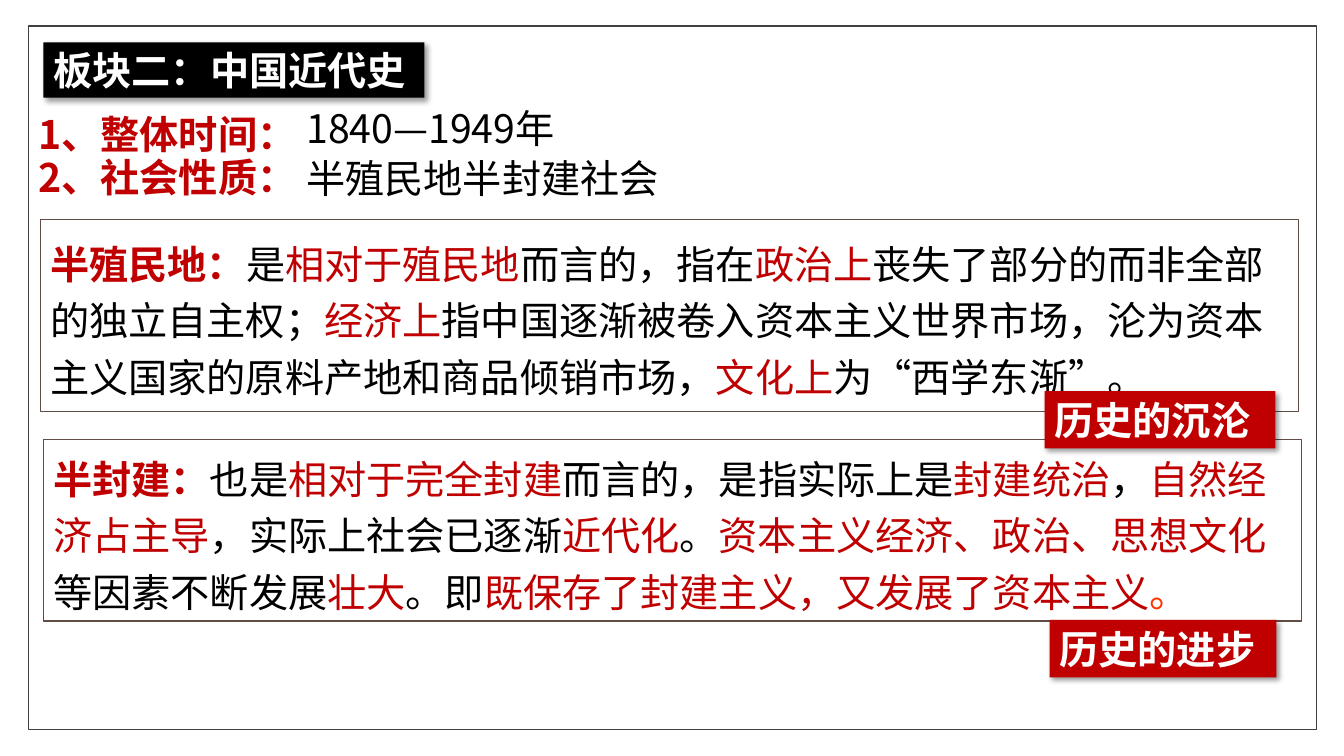
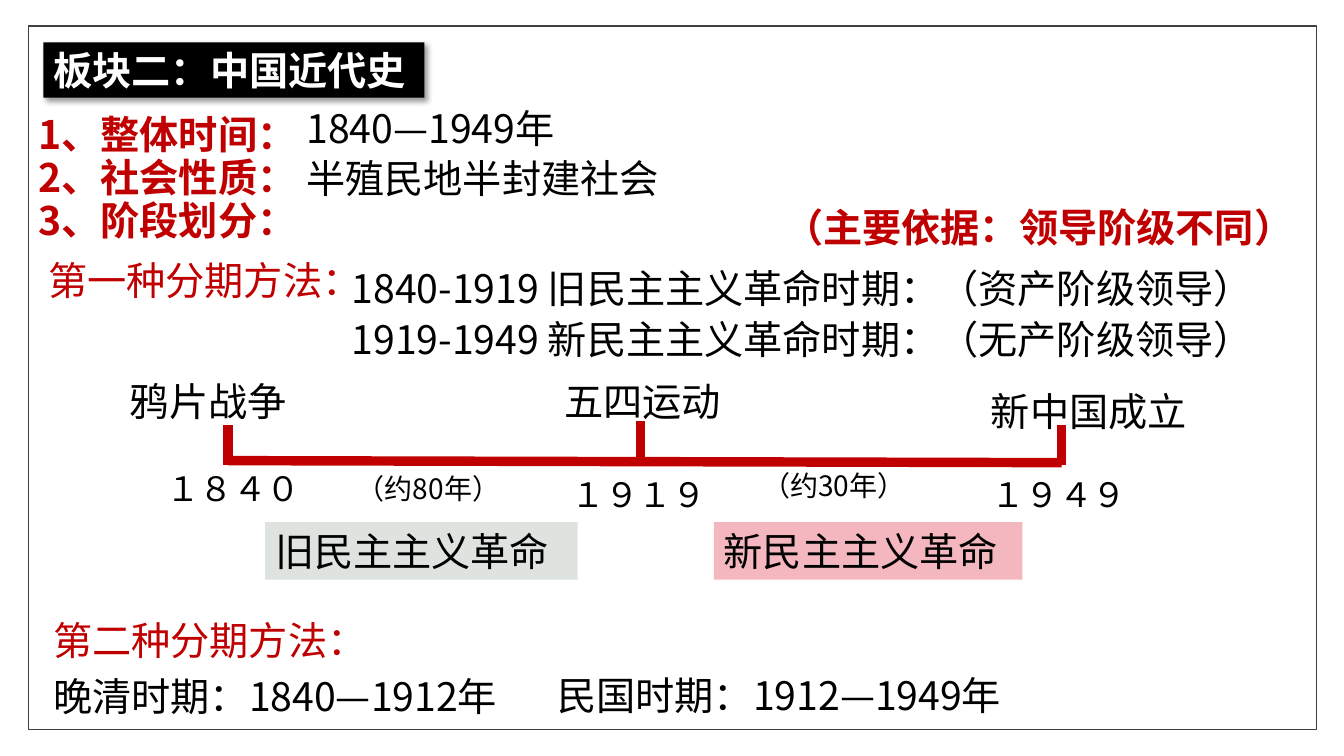
from lxml.etree import SubElement
from pptx import Presentation
from pptx.dml.color import RGBColor
from pptx.enum.shapes import MSO_CONNECTOR, MSO_SHAPE
from pptx.enum.text import MSO_ANCHOR, MSO_AUTO_SIZE, PP_ALIGN
from pptx.oxml import parse_xml
from pptx.oxml.ns import nsdecls, qn
from pptx.util import Emu, Pt

PX = 9144  # 100 px to the inch
FONT = "Noto Sans CJK SC"
INK = RGBColor(0x00, 0x00, 0x00)
WHITE = RGBColor(0xFF, 0xFF, 0xFF)
RED = RGBColor(0xC0, 0x00, 0x00)
ORANGE = RGBColor(0xFF, 0x33, 0x00)
GREY = RGBColor(0x40, 0x40, 0x40)
BROWN = RGBColor(0x60, 0x4C, 0x44)
MIST = RGBColor(0xDF, 0xE3, 0xE0)
PINK = RGBColor(0xF5, 0xB7, 0xBF)
SHADOW = (
    f'<a:effectLst {nsdecls("a")}><a:outerShdw blurRad="50800" dist="38100" '
    'dir="2700000" algn="tl" rotWithShape="0"><a:srgbClr val="000000">'
    '<a:alpha val="40000"/></a:srgbClr></a:outerShdw></a:effectLst>'
)


def write(shape, at, paras, size=28, color=INK, bold=False, pitch=None):
    """Place a shape and fill it; a paragraph is text or a list of (text, color, bold)."""
    shape.left, shape.top, shape.width, shape.height = [Emu(v * PX) for v in at]
    frame = shape.text_frame
    frame.word_wrap = True
    frame.auto_size = MSO_AUTO_SIZE.NONE
    frame.vertical_anchor = MSO_ANCHOR.MIDDLE
    for i, runs in enumerate(paras):
        para = frame.add_paragraph() if i else frame.paragraphs[0]
        para.alignment = PP_ALIGN.LEFT
        para.space_before = Pt(0)
        if pitch:
            para.line_spacing = Pt(pitch)
        if isinstance(runs, str):
            runs = [(runs, color, bold)]
        for words, tint, heavy in runs:
            run = para.add_run()
            run.text = words
            font = run.font
            font.name, font.size, font.bold = FONT, Pt(size), heavy
            font.color.rgb = tint
            SubElement(font._element, qn("a:ea"), typeface=FONT)
    return shape


def panel(slide, at, paras=(), fill=None, line=None, width=1, shade=False, **style):
    """Draw a rectangle with optional text, fill, outline and drop shadow."""
    shape = slide.shapes.add_shape(MSO_SHAPE.RECTANGLE, 0, 0, 0, 0)
    write(shape, at, paras, **style)
    shape.shadow.inherit = False
    if fill is None:
        shape.fill.background()
    else:
        shape.fill.solid()
        shape.fill.fore_color.rgb = fill
    if line is None:
        shape.line.fill.background()
    else:
        shape.line.color.rgb = line
        shape.line.width = Pt(width)
    if shade:
        props = shape._element.spPr
        props.remove(props.find(qn("a:effectLst")))
        props.append(parse_xml(SHADOW))
    return shape


deck = Presentation()
deck.slide_width, deck.slide_height = Emu(1333 * PX), Emu(750 * PX)
points = ["1、整体时间：", "2、社会性质：", "3、阶段划分："]

# Shared frame, title, list and answers
slides = []
for count in (2, 3):
    slide = deck.slides.add_slide(deck.slide_layouts[1])
    slides.append(slide)
    panel(slide, (28, 26, 1278, 698), line=GREY)

    title = slide.shapes.title
    write(title, (43, 42, 378, 55), ["板块二：中国近代史"], color=WHITE, bold=True)
    title.fill.solid()
    title.fill.fore_color.rgb = INK
    title._element.spPr.append(parse_xml(SHADOW))

    body = slide.placeholders[1]
    write(body, (28, 108, 289, 10 + 43 * count), points[:count],
          color=RED, bold=True, pitch=30.7)
    for para in body.text_frame.paragraphs:
        props = para._p.get_or_add_pPr()
        props.set("marL", "0")
        props.set("indent", "0")
        SubElement(props, qn("a:buNone"))

    for top, words in ((98, "1840—1949年"), (148, "半殖民地半封建社会")):
        write(slide.shapes.add_textbox(0, 0, 0, 0), (294, top, 390, 57), [words])

first, second = slides

# Slide 1: two definitions, red and black runs in turn
colony = (
    "半殖民地：|是|相对于殖民地|而言的，指在|政治上|丧失了部分的而非全部的独立自主权；|"
    "经济上|指中国逐渐被卷入资本主义世界市场，沦为资本主义国家的原料产地和商品倾销市场，|"
    "文化上|为“西学东渐”。"
)
feudal = (
    "半封建：|也是|相对于完全封建|而言的，是指实际上是|封建统治|，|自然经济占主导|"
    "，实际上社会已逐渐|近代化|。|资本主义经济、政治、思想文化|等因素不断发展|壮大|。即|"
    "既保存了封建主义，又发展了资本主义"
)
for at, width, words, tail in (
    ((40, 218, 1248, 190), 0.75, colony, []),
    ((43, 436, 1248, 180), 1, feudal, [("。", ORANGE, False)]),
):
    runs = [(part, INK if i % 2 else RED, i == 0)
            for i, part in enumerate(words.split("|"))]
    panel(first, at, [runs + tail], line=BROWN, width=width, pitch=40.4)

# Slide 1: verdict tags
for at, words in (((1036, 388, 229, 57), "历史的沉沦"),
                  ((1041, 615, 225, 57), "历史的进步")):
    panel(first, at, [words], fill=RED, shade=True, color=WHITE, bold=True)

# Slide 2: the two ways to divide the period
eras = ["1840-1919 旧民主主义革命时期：（资产阶级领导）",
        "1919-1949 新民主主义革命时期：（无产阶级领导）"]
write(second.shapes.add_textbox(0, 0, 0, 0), (339, 253, 967, 111), eras, pitch=36.4)

# Slide 2: headings, dates and timeline labels
for at, words, style in (
    ((768, 197, 538, 57), "（主要依据：领导阶级不同）", {"color": RED, "bold": True}),
    ((38, 249, 347, 57), "第一种分期方法：", {"color": RED}),
    ((43, 606, 347, 57), "第二种分期方法：", {"color": RED}),
    ((43, 662, 505, 57), "晚清时期：1840—1912年", {}),
    ((543, 661, 494, 57), "民国时期：1912—1949年", {}),
    ((119, 369, 197, 57), "鸦片战争", {}),
    ((550, 369, 189, 57), "五四运动", {}),
    ((973, 379, 224, 57), "新中国成立", {}),
    ((155, 459, 173, 50), "１８４０", {"size": 24}),
    ((557, 465, 181, 50), "１９１９", {"size": 24}),
    ((974, 465, 165, 50), "１９４９", {"size": 24}),
    ((344, 462, 199, 44), "（约80年）", {"size": 20}),
    ((746, 459, 197, 44), "（约30年）", {"size": 20}),
):
    write(second.shapes.add_textbox(0, 0, 0, 0), at, [words], **style)

# Slide 2: timeline axis and ticks
for ends in ((226, 457, 1053, 459), (226, 422, 226, 461),
             (1053, 422, 1053, 461), (635, 418, 635, 457)):
    line = second.shapes.add_connector(MSO_CONNECTOR.STRAIGHT, *[Emu(v * PX) for v in ends])
    line.line.color.rgb = RED
    line.line.width = Pt(6.75)
    SubElement(line._element.spPr, qn("a:effectLst"))

# Slide 2: stage names
panel(second, (263, 518, 310, 57), ["旧民主主义革命"], fill=MIST)
panel(second, (708, 518, 306, 57), ["新民主主义革命"], fill=PINK)

deck.save("out.pptx")
